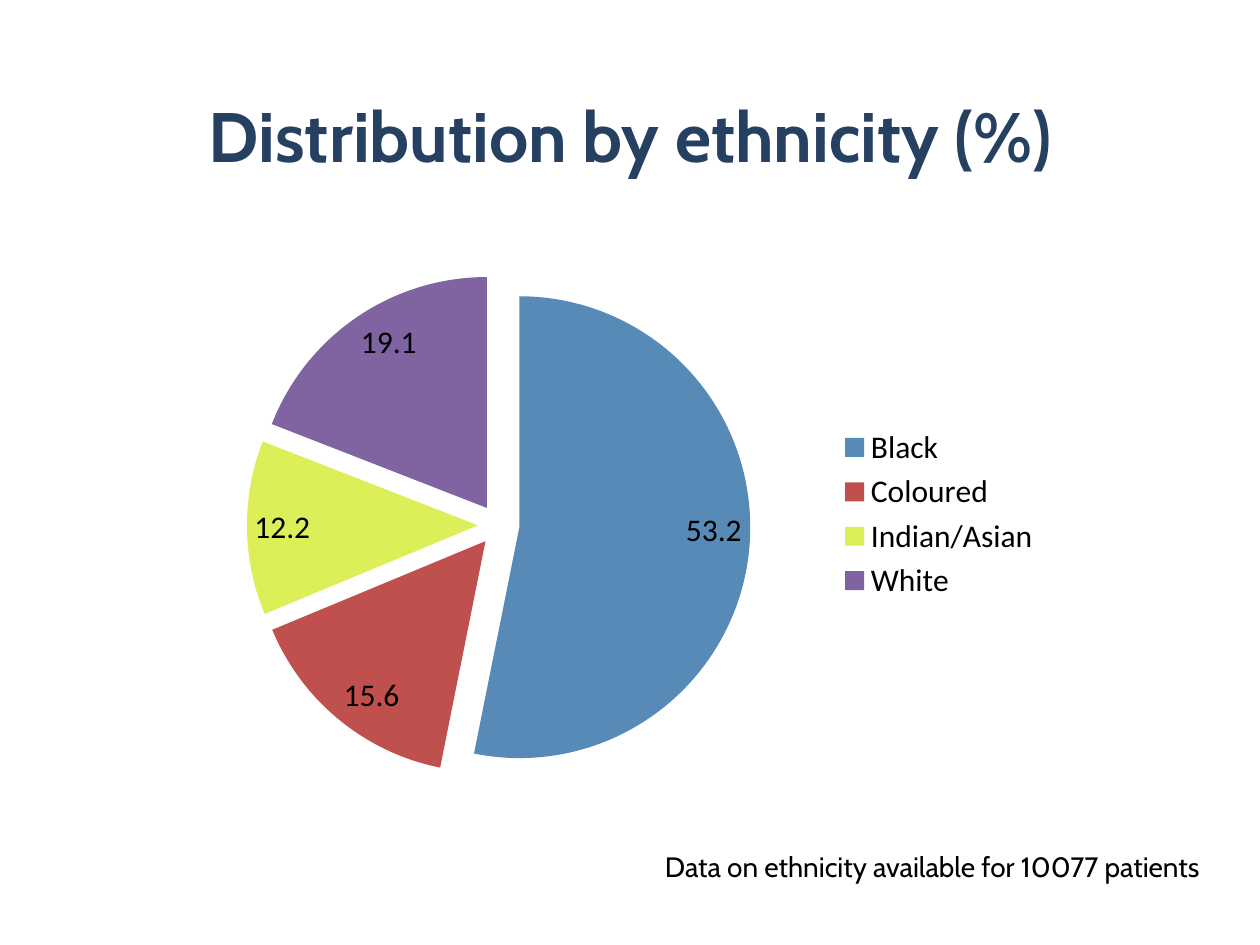
from dataclasses import dataclass

from lxml import etree
from pptx import Presentation
from pptx.chart.data import CategoryChartData
from pptx.dml.color import RGBColor
from pptx.enum.chart import XL_CHART_TYPE, XL_LABEL_POSITION, XL_LEGEND_POSITION
from pptx.enum.text import MSO_ANCHOR, PP_ALIGN
from pptx.oxml.ns import qn
from pptx.util import Inches, Pt

PIE = XL_CHART_TYPE.PIE_EXPLODED
INSIDE_END = XL_LABEL_POSITION.INSIDE_END
LEGEND_RIGHT = XL_LEGEND_POSITION.RIGHT
MIDDLE = MSO_ANCHOR.MIDDLE
CENTER = PP_ALIGN.CENTER
RIGHT = PP_ALIGN.RIGHT
TITLE_ONLY = 5


@dataclass(frozen=True)
class Theme:
    text_font: str = "Cabin"
    chart_font: str = "Calibri"
    title_color: str = "254061"
    text_color: str = "000000"
    slice_colors: tuple = ("578AB7", "C0504D", "DCEF59", "8064A2")
    title_size: int = 40
    chart_size: int = 18
    note_size: int = 16


class SlideBuilder:
    def __init__(self, slide, theme):
        self.slide = slide
        self.theme = theme

    def format_font(self, font, name, size, color, bold=False):
        font.name = name
        font.size = Pt(size)
        font.bold = bold
        font.color.rgb = RGBColor.from_string(color)

    def fill_text(self, shape, text, size, color, alignment, bold=False):
        shape.text_frame.text = text
        shape.text_frame.word_wrap = True
        paragraph = shape.text_frame.paragraphs[0]
        paragraph.alignment = alignment
        self.format_font(paragraph.runs[0].font, self.theme.text_font, size, color, bold)

    def title(self, text, left, top, width, height):
        shape = self.slide.shapes.title
        shape.left, shape.top = Inches(left), Inches(top)
        shape.width, shape.height = Inches(width), Inches(height)
        self.fill_text(shape, text, self.theme.title_size, self.theme.title_color, CENTER, True)
        shape.text_frame.vertical_anchor = MIDDLE

    def note(self, text, left, top, width, height):
        shape = self.slide.shapes.add_textbox(
            Inches(left), Inches(top), Inches(width), Inches(height)
        )
        self.fill_text(shape, text, self.theme.note_size, self.theme.text_color, RIGHT)

    def pie(self, name, shares, explosion, plot_box, left, top, width, height):
        data = CategoryChartData(number_format="0.0")
        data.categories = list(shares)
        data.add_series(name, list(shares.values()))
        chart = self.slide.shapes.add_chart(
            PIE, Inches(left), Inches(top), Inches(width), Inches(height), data
        ).chart
        self.format_font(
            chart.font, self.theme.chart_font, self.theme.chart_size, self.theme.text_color
        )
        chart.has_title = False
        chart.has_legend = True
        chart.legend.position = LEGEND_RIGHT
        chart.legend.include_in_layout = False
        plot = chart.plots[0]
        plot.vary_by_categories = True
        series = plot.series[0]
        for index, color in enumerate(self.theme.slice_colors):
            fill = series.points[index].format.fill
            fill.solid()
            fill.fore_color.rgb = RGBColor.from_string(color)
        self.explode(series, explosion)
        self.place_plot(chart, plot_box)
        plot.has_data_labels = True
        labels = plot.data_labels
        labels.show_value = True
        labels.show_percentage = False
        labels.number_format = "0.0"
        labels.number_format_is_linked = False
        labels.position = INSIDE_END

    def explode(self, series, explosion):
        element = series._element
        for existing in element.findall(qn("c:explosion")):
            element.remove(existing)
        explosion_element = etree.Element(qn("c:explosion"), val=str(explosion))
        element.find(qn("c:dPt")).addprevious(explosion_element)

    def place_plot(self, chart, plot_box):
        plot_area = chart._chartSpace.find(".//" + qn("c:plotArea"))
        for existing in plot_area.findall(qn("c:layout")):
            plot_area.remove(existing)
        layout = etree.Element(qn("c:layout"))
        manual = etree.SubElement(layout, qn("c:manualLayout"))
        settings = {"layoutTarget": "inner", "xMode": "edge", "yMode": "edge"}
        settings.update(zip("xywh", plot_box))
        for tag, value in settings.items():
            etree.SubElement(manual, qn("c:" + tag), val=str(value))
        plot_area.insert(0, layout)


def main():
    presentation = Presentation()
    presentation.slide_width = Inches(10)
    presentation.slide_height = Inches(7.5)
    slide = presentation.slides.add_slide(presentation.slide_layouts[TITLE_ONLY])
    builder = SlideBuilder(slide, Theme())
    builder.title("Distribution by ethnicity (%)", 0.83, 0.44, 8.35, 1.25)
    shares = {"Black": 53.2, "Coloured": 15.6, "Indian/Asian": 12.2, "White": 19.1}
    builder.pie("Series 1", shares, 9, (0.04, 0.07, 0.6, 0.9), 1.69, 1.86, 6.67, 4.44)
    builder.note("Data on ethnicity available for 10077 patients", 1.61, 6.69, 8.01, 0.37)
    presentation.save("out.pptx")


if __name__ == "__main__":
    main()
